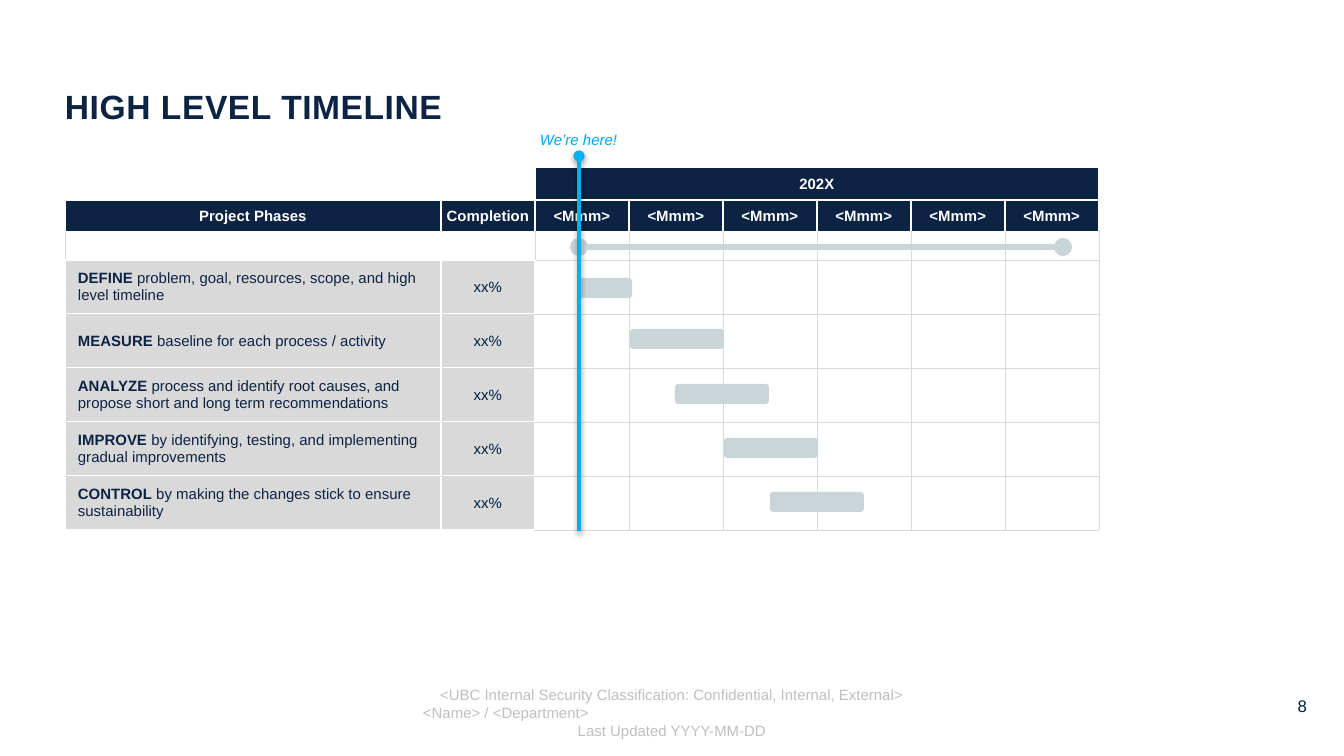
from collections import namedtuple

from lxml.etree import SubElement
from pptx import Presentation
from pptx.dml.color import RGBColor
from pptx.enum.shapes import MSO_CONNECTOR, MSO_SHAPE
from pptx.enum.text import MSO_ANCHOR, PP_ALIGN
from pptx.oxml.ns import qn
from pptx.util import Emu, Pt

Box = namedtuple("Box", "left top width height")
Phase = namedtuple("Phase", "name detail start length drop")


class Theme:
    """Colours, type sizes and font of the slide."""
    font = "Arial"
    navy, ink, white = "0C2344", "002040", "FFFFFF"
    grid, bar, footer = "D9D9D9", "CAD5DA", "BFBFBF"
    marker, marker_text = "00B0F0", "00A7E1"
    title_size, number_size, body_size = 18, 9, 8


COLUMNS = [376] + [94] * 7
ROWS = [33, 32, 28] + [54] * 5
HEADINGS = ["Project Phases", "Completion"] + ["<Mmm>"] * 6
PHASES = [
    Phase("DEFINE", " problem, goal, resources, scope, and high level timeline", 43, 54, 18),
    Phase("MEASURE", " baseline for each process / activity", 95, 94, 15),
    Phase("ANALYZE", " process and identify root causes, and propose short and long term recommendations", 140, 94, 16),
    Phase("IMPROVE", " by identifying, testing, and implementing gradual improvements", 189, 94, 16),
    Phase("CONTROL", " by making the changes stick to ensure sustainability", 235, 94, 16),
]


def px(value):
    """Turn pixels into EMU."""
    return Emu(round(value * 914400 / 134.4))


def style(paragraph, color, size=Theme.body_size, bold=False, italic=False, align=PP_ALIGN.LEFT):
    """Set the font and alignment of a paragraph."""
    paragraph.alignment = align
    font = paragraph.font
    font.name, font.size, font.bold, font.italic = Theme.font, Pt(size), bold, italic
    font.color.rgb = RGBColor.from_string(color)


def set_margins(target, left, top, right, bottom):
    """Set the inner margins of a text frame or cell."""
    target.margin_left, target.margin_top = px(left), px(top)
    target.margin_right, target.margin_bottom = px(right), px(bottom)


def add_text_box(shapes, box, margins=(0, 0, 0, 0), anchor=MSO_ANCHOR.TOP):
    """Add a wrapping text box and return its text frame."""
    frame = shapes.add_textbox(*map(px, box)).text_frame
    frame.word_wrap = True
    frame.vertical_anchor = anchor
    set_margins(frame, *margins)
    return frame


def add_line(shapes, start, end, color, width, ends):
    """Add a straight line with oval ends and return its effect list."""
    line = shapes.add_connector(MSO_CONNECTOR.STRAIGHT, *map(px, start + end))
    line.line.color.rgb = RGBColor.from_string(color)
    line.line.width = Pt(width)
    outline = line.line._get_or_add_ln()
    for end_name in ends:
        SubElement(outline, qn(f"a:{end_name}"), type="oval")
    return SubElement(line._element.spPr, qn("a:effectLst"))


def set_borders(cell, **edges):
    """Draw the named edges of a cell, each given as colour and points."""
    properties = cell._tc.get_or_add_tcPr()
    for position, side in enumerate("LRTB"):
        color, width = edges.get(side, edges.get("rest"))
        line = SubElement(properties, qn(f"a:ln{side}"), w=str(Pt(width)))
        SubElement(SubElement(line, qn("a:solidFill")), qn("a:srgbClr"), val=color)
        properties.insert(position, line)


def fill_cell(cell, color):
    """Fill a cell with a solid colour."""
    cell.fill.solid()
    cell.fill.fore_color.rgb = RGBColor.from_string(color)


def write_header(cell, text):
    """Write a dark heading cell."""
    cell.text = text
    style(cell.text_frame.paragraphs[0], Theme.white, bold=True, align=PP_ALIGN.CENTER)
    set_margins(cell, 1, 1, 1, 0)
    fill_cell(cell, Theme.navy)


def write_phase(name_cell, completion_cell, phase):
    """Write the description and completion of one phase."""
    paragraph = name_cell.text_frame.paragraphs[0]
    style(paragraph, Theme.navy)
    name = paragraph.add_run()
    name.text, name.font.bold = phase.name, True
    paragraph.add_run().text = phase.detail
    completion_cell.text = "xx%"
    style(completion_cell.text_frame.paragraphs[0], Theme.ink, align=PP_ALIGN.CENTER)
    set_margins(name_cell, 13, 5, 0, 5)
    set_margins(completion_cell, 0, 5, 0, 5)
    for cell in (name_cell, completion_cell):
        fill_cell(cell, Theme.grid)


def add_phase_table(slide, box):
    """Add the grid of phases and months."""
    table_frame = slide.shapes.add_table(len(ROWS), len(COLUMNS), *map(px, box))
    table = table_frame.table
    table.first_row = table.horz_banding = False
    for column, width in zip(table.columns, COLUMNS):
        column.width = px(width)
    for row, height in zip(table.rows, ROWS):
        row.height = px(height)
    header, edge, grid = (Theme.white, 1), (Theme.white, 0.75), (Theme.grid, 0.25)
    for row_index in range(len(ROWS)):
        for column_index in range(len(COLUMNS)):
            cell = table.cell(row_index, column_index)
            cell.vertical_anchor = MSO_ANCHOR.MIDDLE
            set_margins(cell, 0, 1, 0, 1)
            style(cell.text_frame.paragraphs[0], Theme.ink)
            cell.fill.background()
            if row_index < 2:
                set_borders(cell, rest=header)
            elif row_index == 2:
                set_borders(cell, T=header, B=edge if column_index < 2 else grid, rest=grid)
            elif column_index < 2:
                set_borders(cell, rest=edge)
            else:
                set_borders(cell, L=edge if column_index == 2 else grid, rest=grid)
    for row_index, first, last in ((0, 0, 1), (0, 2, 7), (2, 0, 1)):
        table.cell(row_index, first).merge(table.cell(row_index, last))
    write_header(table.cell(0, 2), "202X")
    for column_index, heading in enumerate(HEADINGS):
        write_header(table.cell(1, column_index), heading)
    for row_index, phase in enumerate(PHASES, 3):
        write_phase(table.cell(row_index, 0), table.cell(row_index, 1), phase)


def add_schedule(slide, box):
    """Add the overall span line and one bar for each phase."""
    span_top = box.top + sum(ROWS[:2]) + ROWS[2] // 2 + 1
    add_line(slide.shapes, (box.left + 44, span_top), (box.left + 528, span_top),
             Theme.bar, 3.25, ("headEnd", "tailEnd"))
    for index, phase in enumerate(PHASES):
        top = box.top + sum(ROWS[:3 + index]) + phase.drop
        bar = slide.shapes.add_shape(MSO_SHAPE.ROUNDED_RECTANGLE, px(box.left + phase.start),
                                     px(top), px(phase.length), px(20))
        bar.shadow.inherit = False
        bar.fill.solid()
        bar.fill.fore_color.rgb = RGBColor.from_string(Theme.bar)
        bar.line.fill.background()


def add_today_marker(slide, box):
    """Add the labelled vertical line for the current date."""
    group = slide.shapes.add_group_shape()
    center = box.left + box.width // 2
    effects = add_line(group.shapes, (center, box.top + box.height), (center, box.top + 32),
                       Theme.marker, 2, ("tailEnd",))
    shadow = SubElement(effects, qn("a:outerShdw"), blurRad=str(Pt(3.1)), dist=str(Pt(1.6)),
                        dir="5400000", rotWithShape="0")
    color = SubElement(shadow, qn("a:srgbClr"), val="000000")
    SubElement(color, qn("a:alpha"), val="38000")
    frame = add_text_box(group.shapes, Box(box.left, box.top, box.width, 32), (13, 7, 13, 7))
    frame.word_wrap = False
    frame.text = "We’re here!"
    style(frame.paragraphs[0], Theme.marker_text, italic=True)


def add_title(slide, box):
    """Add the slide title."""
    frame = add_text_box(slide.shapes, box, anchor=MSO_ANCHOR.MIDDLE)
    paragraph = frame.paragraphs[0]
    run = paragraph.add_run()
    run.text = "HIGH LEVEL TIMELINE"
    run._r.get_or_add_rPr().set("spc", "30")
    paragraph.line_spacing = Pt(21)
    style(paragraph, Theme.navy, Theme.title_size, bold=True)


def add_footer(slide, box):
    """Add the classification, owner and date lines."""
    frame = add_text_box(slide.shapes, box, (16, 7, 16, 7), MSO_ANCHOR.MIDDLE)
    frame.text = ("<UBC Internal Security Classification: Confidential, Internal, External>\n"
                  "<Name> / <Department>\nLast Updated YYYY-MM-DD")
    for paragraph, align in zip(frame.paragraphs, (PP_ALIGN.CENTER, PP_ALIGN.LEFT, PP_ALIGN.CENTER)):
        style(paragraph, Theme.footer, align=align)


def add_page_number(slide, box):
    """Add the page number."""
    frame = add_text_box(slide.shapes, box)
    frame.text = "8"
    style(frame.paragraphs[0], Theme.ink, Theme.number_size, align=PP_ALIGN.RIGHT)


def main():
    """Build and save the slide."""
    presentation = Presentation()
    presentation.slide_width, presentation.slide_height = px(1344), px(756)
    slide = presentation.slides.add_slide(presentation.slide_layouts[6])
    add_page_number(slide, Box(1262, 696, 45, 28))
    add_phase_table(slide, Box(65, 167, sum(COLUMNS), sum(ROWS)))
    add_title(slide, Box(65, 61, 1126, 91))
    add_footer(slide, Box(407, 686, 530, 53))
    add_schedule(slide, Box(535, 167, sum(COLUMNS[2:]), sum(ROWS)))
    add_today_marker(slide, Box(527, 124, 105, 407))
    presentation.save("out.pptx")


if __name__ == "__main__":
    main()
